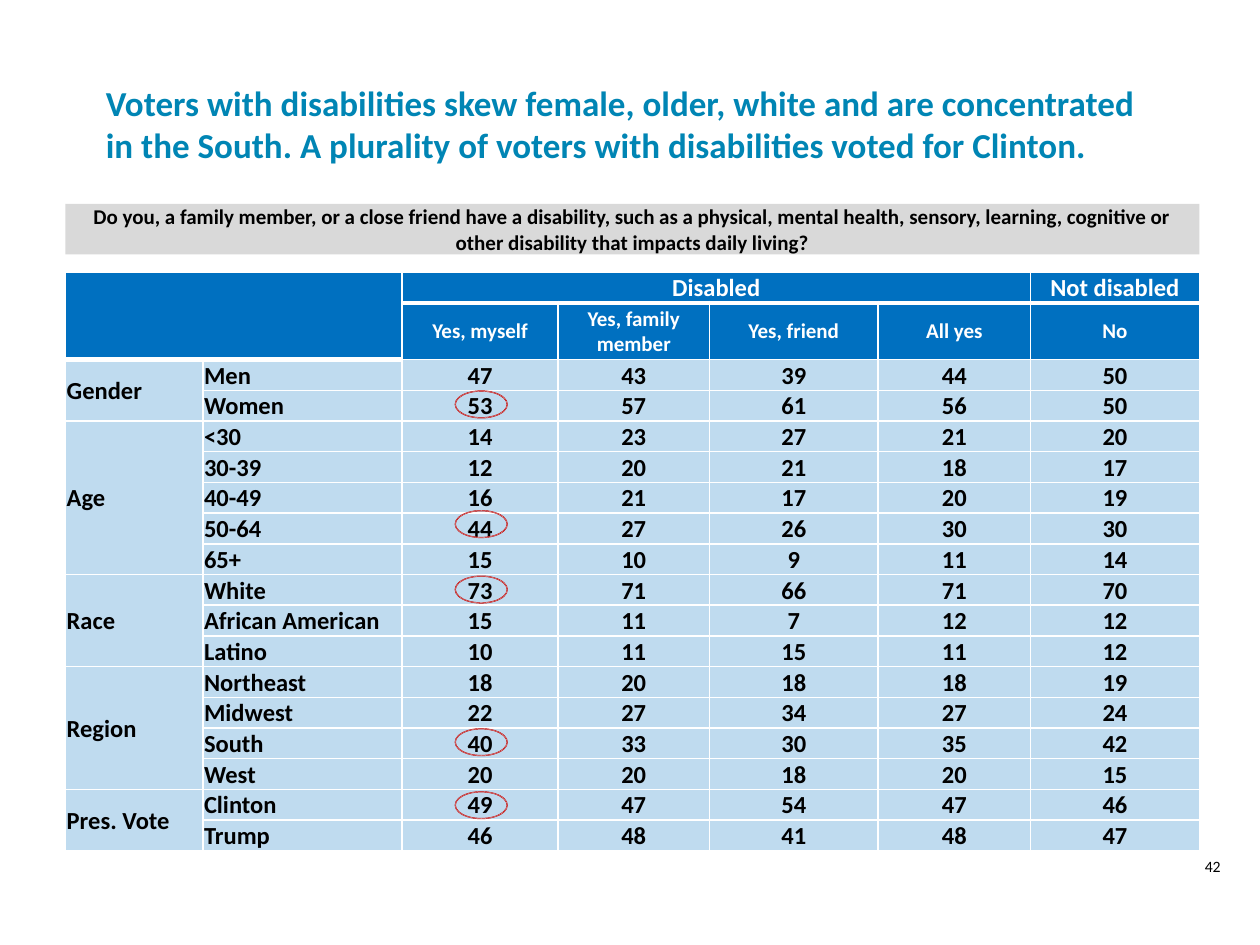
import dataclasses

import pptx
import pptx.dml.color
import pptx.enum.shapes
import pptx.enum.text
import pptx.oxml
import pptx.oxml.ns
import pptx.util

Pt = pptx.util.Pt
RGB = pptx.dml.color.RGBColor.from_string
ALIGN = pptx.enum.text.PP_ALIGN
ANCHOR = pptx.enum.text.MSO_ANCHOR
SHAPE = pptx.enum.shapes.MSO_SHAPE


@dataclasses.dataclass(frozen=True)
class Theme:
    font: str = "Calibri"
    title: str = "0085B4"
    header: str = "0070C0"
    body: str = "BFDBEF"
    banner: str = "D9D9D9"
    ring: str = "EAEAEA"
    ring_line: str = "C00000"
    dark: str = "000000"
    light: str = "FFFFFF"
    title_size: int = 20
    table_size: int = 14
    small_size: int = 12
    number_size: int = 9


theme = Theme()


def write(frame, text, size, color, align=ALIGN.CENTER, bold=True):
    frame.text = text
    paragraph = frame.paragraphs[0]
    paragraph.alignment = align
    font = paragraph.font
    font.name, font.size, font.bold = theme.font, Pt(size), bold
    font.color.rgb = RGB(color)


def add_borders(cell, bottom_width):
    properties = cell._tc.get_or_add_tcPr()
    widths = {"L": 1, "R": 1, "T": 1, "B": bottom_width}
    for position, (side, width) in enumerate(widths.items()):
        properties.insert(position, pptx.oxml.parse_xml(
            f'<a:ln{side} {pptx.oxml.ns.nsdecls("a")} w="{Pt(width)}"><a:solidFill>'
            f'<a:srgbClr val="{theme.light}"/></a:solidFill></a:ln{side}>'))


deck = pptx.Presentation()
deck.slide_width, deck.slide_height = Pt(720), Pt(540)
slide = deck.slides.add_slide(deck.slide_layouts[5])

# Title
title = slide.shapes.title
title.left, title.top, title.width, title.height = Pt(53.3), Pt(28.8), Pt(666.7 - 0), Pt(83.5)
title.width = Pt(613.4)
write(title.text_frame,
      "Voters with disabilities skew female, older, white and are concentrated in the South. "
      "A plurality of voters with disabilities voted for Clinton.",
      theme.title_size, theme.title, ALIGN.LEFT)
title.text_frame.word_wrap = True
title.text_frame.auto_size = pptx.enum.text.MSO_AUTO_SIZE.NONE
title.text_frame.vertical_anchor = ANCHOR.MIDDLE

# Page number
page_number = slide.shapes.add_textbox(Pt(666), Pt(486), Pt(54), Pt(23.8))
page_number.text_frame.word_wrap = True
write(page_number.text_frame, "42", theme.number_size, theme.dark, bold=False)

# Survey question
question = slide.shapes.add_shape(SHAPE.RECTANGLE, Pt(37.4), Pt(116.6), Pt(648), Pt(28.8))
question.shadow.inherit = False
question.fill.solid()
question.fill.fore_color.rgb = RGB(theme.banner)
question.line.fill.background()
question.text_frame.word_wrap = True
question.text_frame.vertical_anchor = ANCHOR.MIDDLE
write(question.text_frame,
      "Do you, a family member, or a close friend have a disability, such as a physical, "
      "mental health, sensory, learning, cognitive or other disability that impacts daily living?",
      theme.small_size, theme.dark)

# Survey results
groups = {
    "Gender": [("Men", 47, 43, 39, 44, 50), ("Women", 53, 57, 61, 56, 50)],
    "Age": [("<30", 14, 23, 27, 21, 20), ("30-39", 12, 20, 21, 18, 17),
            ("40-49", 16, 21, 17, 20, 19), ("50-64", 44, 27, 26, 30, 30),
            ("65+", 15, 10, 9, 11, 14)],
    "Race": [("White", 73, 71, 66, 71, 70), ("African American", 15, 11, 7, 12, 12),
             ("Latino", 10, 11, 15, 11, 12)],
    "Region": [("Northeast", 18, 20, 18, 18, 19), ("Midwest", 22, 27, 34, 27, 24),
               ("South", 40, 33, 30, 35, 42), ("West", 20, 20, 18, 20, 15)],
    "Pres. Vote": [("Clinton", 49, 47, 54, 47, 46), ("Trump", 46, 48, 41, 48, 47)],
}
rows = [
    ("", "", "Disabled", "", "", "", "Not disabled"),
    ("", "", "Yes, myself", "Yes, family member", "Yes, friend", "All yes", "No"),
]
merges = [(0, 0, 1, 1), (0, 2, 0, 5)]
for group, answers in groups.items():
    merges.append((len(rows), 0, len(rows) + len(answers) - 1, 0))
    for i, answer in enumerate(answers):
        rows.append((group if i == 0 else "", *answer))

column_widths = [78.5, 113.8, 89.3, 86.4, 96.5, 87.1, 96.4]
row_heights = [15.8, 32.4] + [16.6] * (len(rows) - 2)
results_frame = slide.shapes.add_table(
    len(rows), len(column_widths), Pt(37.4), Pt(155.5), Pt(648), Pt(330.5))
results = results_frame.table
results.first_row = results.horz_banding = False
for column, width in zip(results.columns, column_widths):
    column.width = Pt(width)
for row, height in zip(results.rows, row_heights):
    row.height = Pt(height)
results_frame.height = Pt(330.5)

for r, values in enumerate(rows):
    is_header = r < 2
    for c, value in enumerate(values):
        cell = results.cell(r, c)
        cell.margin_left = cell.margin_right = cell.margin_top = Pt(0.72)
        cell.margin_bottom = 0
        cell.vertical_anchor = ANCHOR.BOTTOM if r == 0 else ANCHOR.MIDDLE
        cell.fill.solid()
        cell.fill.fore_color.rgb = RGB(theme.header if is_header else theme.body)
        write(cell.text_frame, str(value),
              theme.small_size if r == 1 else theme.table_size,
              theme.light if is_header else theme.dark,
              ALIGN.LEFT if c < 2 else ALIGN.CENTER)
        add_borders(cell, 3 if r == 0 or (r == 1 and c < 2) else 1)

for top, left, bottom, right in merges:
    results.cell(top, left).merge(results.cell(bottom, right))

# Rings around the key figures: Women, White, 50-64, South, Clinton
for ring_top in (223.2, 329, 291.6, 416.2, 452.2):
    ring = slide.shapes.add_shape(SHAPE.DONUT, Pt(259.9), Pt(ring_top), Pt(30.2), Pt(15.8))
    ring.adjustments[0] = 0.03
    ring.shadow.inherit = False
    ring.fill.solid()
    ring.fill.fore_color.rgb = RGB(theme.ring)
    ring.line.color.rgb = RGB(theme.ring_line)
    ring.line.width = Pt(0.25)

deck.save("out.pptx")
